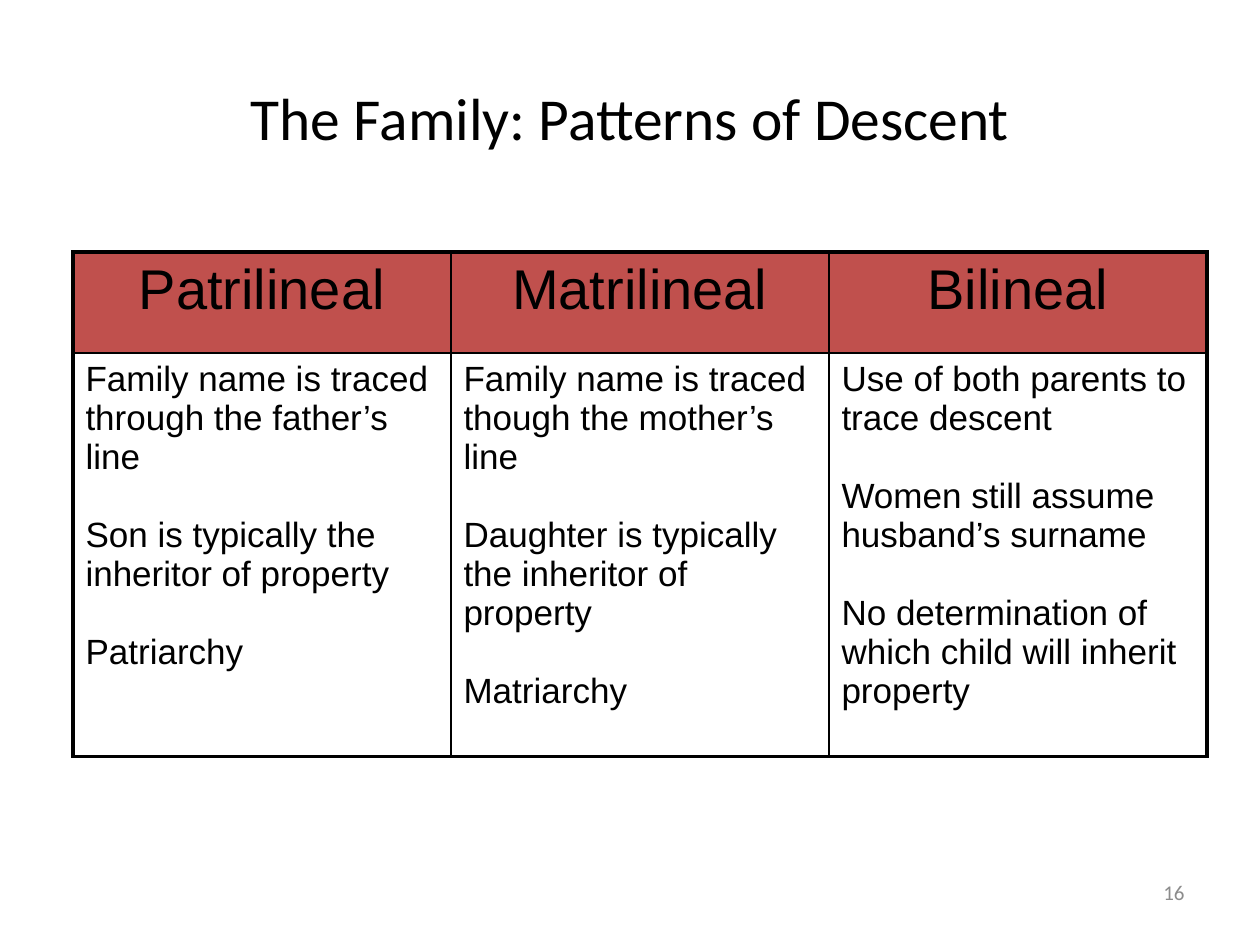
"""Build the slide comparing three patterns of family descent."""
from dataclasses import dataclass

from lxml.etree import SubElement
from pptx import Presentation
from pptx.dml.color import RGBColor as Rgb
from pptx.enum.text import MSO_ANCHOR as Anchor, PP_ALIGN as Align
from pptx.oxml.ns import qn
from pptx.util import Cm, Pt


@dataclass(frozen=True)
class Theme:
    """Colours, fonts and type sizes."""
    ink: str = "000000"
    muted: str = "8C8C8C"
    header: str = "C0504D"
    heading_font: str = "Calibri"
    table_font: str = "Arial"
    title_size: float = 34
    header_size: float = 32
    body_size: float = 20
    number_size: float = 12
    point_gap: float = 22.3
    outer_line: float = 2.25
    inner_line: float = 1


@dataclass(frozen=True)
class Descent:
    """One pattern of descent and its points."""
    name: str
    points: tuple[str, ...]


THEME = Theme()
PATTERNS = (
    Descent("Patrilineal", (
        "Family name is traced through the father’s line",
        "Son is typically the inheritor of property",
        "Patriarchy")),
    Descent("Matrilineal", (
        "Family name is traced though the mother’s line",
        "Daughter is typically the inheritor of property",
        "Matriarchy")),
    Descent("Bilineal", (
        "Use of both parents to trace descent",
        "Women still assume husband’s surname",
        "No determination of which child will inherit property")),
)
ROW_HEIGHTS = (Cm(2.04), Cm(8.13))
COLUMN_WIDTH = Cm(7.62)


def write(frame, lines: tuple[str, ...], font: str, size: float, color: str,
          align: Align = Align.LEFT, gap: float = 0) -> None:
    """Write one formatted paragraph per line, separated by the gap."""
    looks = {"name": font, "size": Pt(size), "bold": False}
    for index, line in enumerate(lines):
        paragraph = frame.add_paragraph() if index else frame.paragraphs[0]
        paragraph.alignment = align
        paragraph.space_before = Pt(gap if index else 0)
        run = paragraph.add_run()
        run.text = line
        for key, value in looks.items():
            setattr(run.font, key, value)
        run.font.color.rgb = Rgb.from_string(color)


def place(shape, left: float, top: float, width: float, height: float) -> None:
    """Set the position and size of a shape in centimetres."""
    box = {"left": left, "top": top, "width": width, "height": height}
    for key, value in box.items():
        setattr(shape, key, Cm(value))


def add_borders(cell, row: int, column: int) -> None:
    """Draw thick borders on the table's edge and thin ones inside."""
    edges = {"a:lnL": column == 0, "a:lnR": column == len(PATTERNS) - 1,
             "a:lnT": row == 0, "a:lnB": row == len(ROW_HEIGHTS) - 1}
    properties = cell._tc.get_or_add_tcPr()
    for tag, is_outer in edges.items():
        width = Pt(THEME.outer_line if is_outer else THEME.inner_line)
        line = SubElement(properties, qn(tag), w=str(int(width)))
        SubElement(SubElement(line, qn("a:solidFill")), qn("a:srgbClr"), val=THEME.ink)


def add_descent_table(slide) -> None:
    """Add the table with one column per pattern of descent."""
    table = slide.shapes.add_table(
        len(ROW_HEIGHTS), len(PATTERNS), Cm(1.47), Cm(5.08),
        COLUMN_WIDTH * len(PATTERNS), sum(ROW_HEIGHTS)).table
    for key, value in {"first_row": False, "horz_banding": False}.items():
        setattr(table, key, value)
    for row, height in zip(table.rows, ROW_HEIGHTS):
        row.height = height
    for column, pattern in enumerate(PATTERNS):
        table.columns[column].width = COLUMN_WIDTH
        header, body = table.cell(0, column), table.cell(1, column)
        for row, cell in enumerate((header, body)):
            add_borders(cell, row, column)
        header.fill.solid()
        header.fill.fore_color.rgb = Rgb.from_string(THEME.header)
        body.fill.background()
        write(header.text_frame, (pattern.name,), THEME.table_font,
              THEME.header_size, THEME.ink, Align.CENTER)
        write(body.text_frame, pattern.points, THEME.table_font,
              THEME.body_size, THEME.ink, gap=THEME.point_gap)


def main() -> None:
    """Build and save the slide."""
    deck = Presentation()
    deck.slide_width, deck.slide_height = Cm(25.4), Cm(19.05)
    slide = deck.slides.add_slide(deck.slide_layouts[5])

    title = slide.shapes.title
    place(title, 1.27, 0.76, 22.86, 3.18)
    title.text_frame.vertical_anchor = Anchor.MIDDLE
    write(title.text_frame, ("The Family: Patterns of Descent",),
          THEME.heading_font, THEME.title_size, THEME.ink, Align.CENTER)

    add_descent_table(slide)

    page_number = slide.shapes.add_textbox(0, 0, 0, 0)
    place(page_number, 18.2, 17.35, 5.93, 1.27)
    page_number.text_frame.word_wrap = True
    page_number.text_frame.vertical_anchor = Anchor.MIDDLE
    write(page_number.text_frame, ("16",), THEME.heading_font,
          THEME.number_size, THEME.muted, Align.RIGHT)

    deck.save("out.pptx")


if __name__ == "__main__":
    main()
